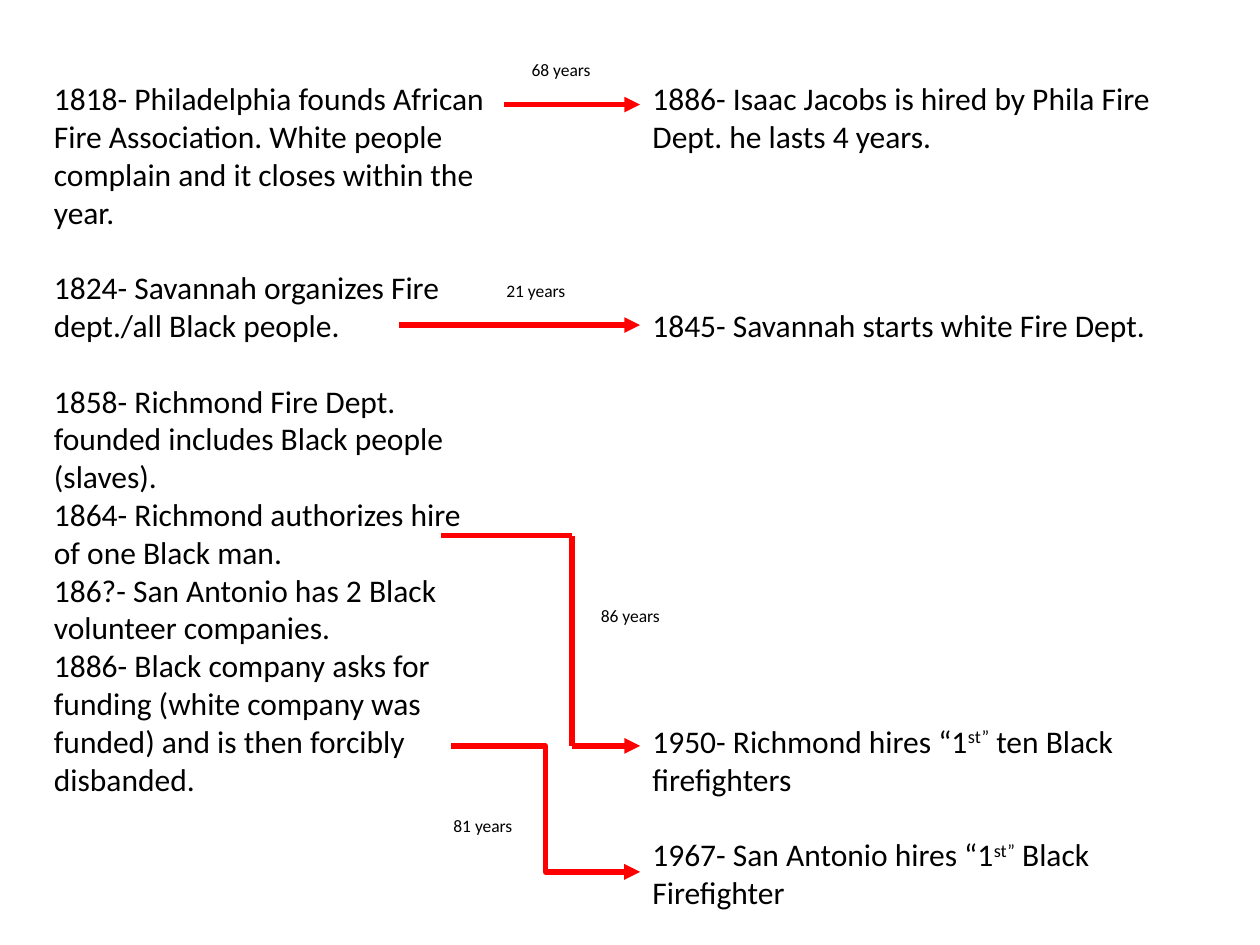
"""Builds a slide that links early Black fire companies to later hiring dates."""
from lxml import etree
from pptx import Presentation, util as u
from pptx.dml.color import RGBColor
from pptx.enum import shapes, text
from pptx.oxml import ns

LINE_PITCH = 21.6
BLACK, RED = "000000", "FF0000"
STRAIGHT, ELBOW = shapes.MSO_CONNECTOR.STRAIGHT, shapes.MSO_CONNECTOR.ELBOW

# Each event: blank lines above it, then its runs; odd runs are superscript.
FOUNDINGS = [
    (0, ["1818- Philadelphia founds African Fire Association. White people complain and it closes within the year."]),
    (1, ["1824- Savannah organizes Fire dept./all Black people."]),
    (1, ["1858- Richmond Fire Dept. founded includes Black people (slaves)."]),
    (0, ["1864- Richmond authorizes hire of one Black man."]),
    (0, ["186?- San Antonio has 2 Black volunteer companies."]),
    (0, ["1886- Black company asks for funding (white company was funded) and is then forcibly disbanded."]),
]
HIRINGS = [
    (0, ["1886- Isaac Jacobs is hired by Phila Fire Dept. he lasts 4 years."]),
    (4, ["1845- Savannah starts white Fire Dept."]),
    (10, ["1950- Richmond hires “1", "st”", " ten Black firefighters"]),
    (1, ["1967- San Antonio hires “1", "st”", " Black Firefighter"]),
]
COLUMNS = [
    (FOUNDINGS, (0.33, 0.58, 3.67, 5.86)),
    (HIRINGS, (5.08, 0.58, 4.17, 6.77)),
]
SPANS = [
    ("68 years", (4.12, 0.42, 0.88, 0.27)),
    ("21 years", (3.92, 2.17, 1, 0.27)),
    ("86 years", (4.67, 4.75, 1.08, 0.27)),
    ("81 years", (3.5, 6.42, 0.75, 0.27)),
]
LINKS = [
    (STRAIGHT, (4, 0.83, 5.08, 0.83), True),
    (STRAIGHT, (3.17, 2.58, 5.08, 2.58), True),
    (STRAIGHT, (3.5, 4.25, 4.54, 4.25), False),
    (STRAIGHT, (4.54, 4.25, 4.54, 5.92), False),
    (STRAIGHT, (4.54, 5.92, 5.08, 5.92), True),
    (ELBOW, (3.58, 5.92, 5.08, 6.92), True),
]


def color(value):
    return RGBColor.from_string(value)


def add_events(slide, events, place, size):
    frame = slide.shapes.add_textbox(*map(u.Inches, place)).text_frame
    frame.word_wrap = True
    frame.auto_size = text.MSO_AUTO_SIZE.SHAPE_TO_FIT_TEXT
    for index, (gap, pieces) in enumerate(events):
        event = frame.add_paragraph() if index else frame.paragraphs[0]
        event.space_before = u.Pt(gap * LINE_PITCH)
        for order, words in enumerate(pieces):
            run = event.add_run()
            run.text = words
            for key, value in {"name": "Calibri", "size": u.Pt(size)}.items():
                setattr(run.font, key, value)
            run.font.color.rgb = color(BLACK)
            if order % 2:
                run._r.get_or_add_rPr().set("baseline", "30000")


def add_link(slide, kind, ends, arrow):
    link = slide.shapes.add_connector(kind, *map(u.Inches, ends))
    link.line.color.rgb = color(RED)
    link.line.width = u.Pt(3)
    if arrow:
        etree.SubElement(link.line._get_or_add_ln(), ns.qn("a:tailEnd"), type="triangle")
    etree.SubElement(link._element.spPr, ns.qn("a:effectLst"))


def main():
    deck = Presentation()
    deck.slide_width, deck.slide_height = u.Inches(10), u.Inches(7.5)
    slide = deck.slides.add_slide(deck.slide_layouts[6])
    for events, place in COLUMNS:
        add_events(slide, events, place, 18)
    for link in LINKS:
        add_link(slide, *link)
    for years, place in SPANS:
        add_events(slide, [(0, [years])], place, 10)
    deck.save("out.pptx")


if __name__ == "__main__":
    main()
